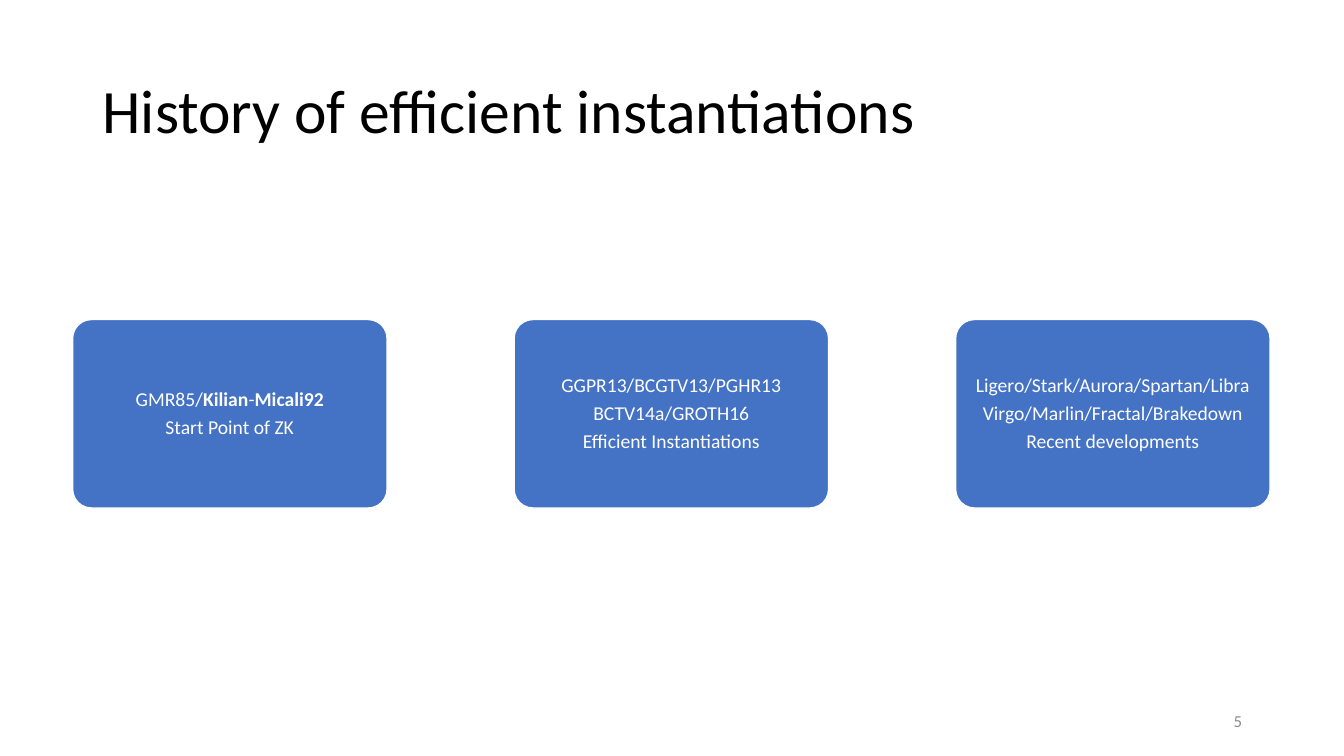
from pptx import Presentation
from pptx.dml.color import RGBColor
from pptx.enum.shapes import MSO_SHAPE
from pptx.enum.text import MSO_ANCHOR, PP_ALIGN
from pptx.util import Inches, Pt

ROUND = MSO_SHAPE.ROUNDED_RECTANGLE
MIDDLE = MSO_ANCHOR.MIDDLE
LEFT, CENTER, RIGHT = PP_ALIGN.LEFT, PP_ALIGN.CENTER, PP_ALIGN.RIGHT


def color(code):
    return RGBColor.from_string(code)


def write(shape, lines, size, ink, align=LEFT, space=1, after=0, inset=(0.1, 0.05)):
    frame = shape.text_frame
    frame.word_wrap = True
    frame.vertical_anchor = MIDDLE
    frame.margin_left = frame.margin_right = Inches(inset[0])
    frame.margin_top = frame.margin_bottom = Inches(inset[1])
    for row, line in enumerate(lines):
        para = frame.add_paragraph() if row else frame.paragraphs[0]
        para.alignment = align
        para.line_spacing = space
        para.space_after = Pt(after)
        for part, words in enumerate(line.split("*")):
            if words:
                run = para.add_run()
                run.text = words
                run.font.name = "Calibri"
                run.font.size = Pt(size)
                run.font.bold = part % 2 == 1
                run.font.color.rgb = color(ink)


deck = Presentation()
deck.slide_width, deck.slide_height = Inches(13.333), Inches(7.5)
slide = deck.slides.add_slide(deck.slide_layouts[6])
shapes = slide.shapes

stages = [
    ["GMR85/*Kilian*-*Micali92*", "Start Point of ZK"],
    ["GGPR13/BCGTV13/PGHR13", "BCTV14a/GROTH16", "Efficient Instantiations"],
    ["Ligero/Stark/Aurora/Spartan/Libra", "Virgo/Marlin/Fractal/Brakedown",
     "Recent developments"],
]
start, pitch, top, width, height = 0.72, 4.38, 3.17, 3.12, 1.87

for col, lines in enumerate(stages):
    card = shapes.add_shape(ROUND, Inches(start + col * pitch), Inches(top),
                            Inches(width), Inches(height))
    card.adjustments[0] = 0.1
    card.shadow.inherit = False
    card.fill.solid()
    card.fill.fore_color.rgb = color("4472C4")
    card.line.color.rgb = color("FFFFFF")
    card.line.width = Pt(1)
    write(card, lines, 14, "FFFFFF", align=CENTER, space=0.9, after=4.9,
          inset=(0.06, 0.06))

title = shapes.add_textbox(Inches(0.92), Inches(0.4), Inches(11.5), Inches(1.45))
write(title, ["History of efficient instantiations"], 44, "000000", space=0.9)

number = shapes.add_textbox(Inches(9.42), Inches(6.95), Inches(3), Inches(0.4))
write(number, ["5"], 12, "8C8C8C", align=RIGHT)

deck.save("out.pptx")
